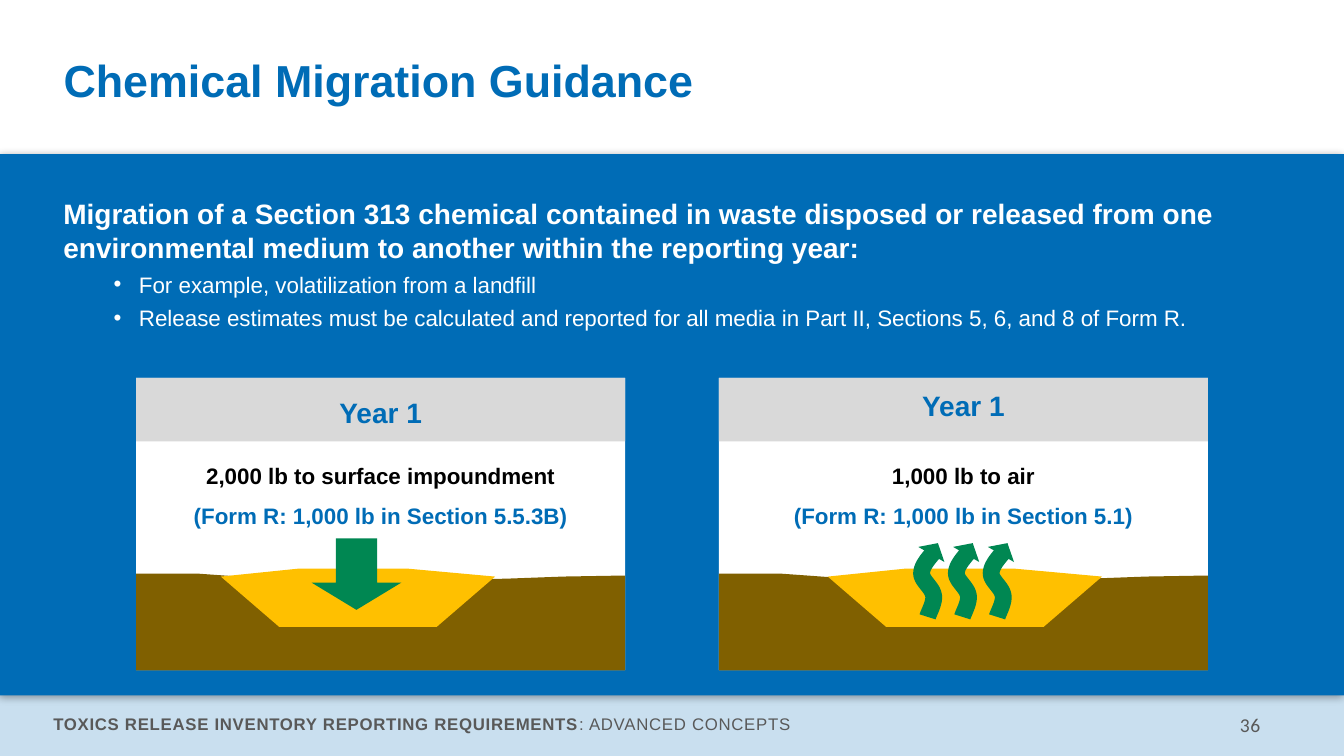
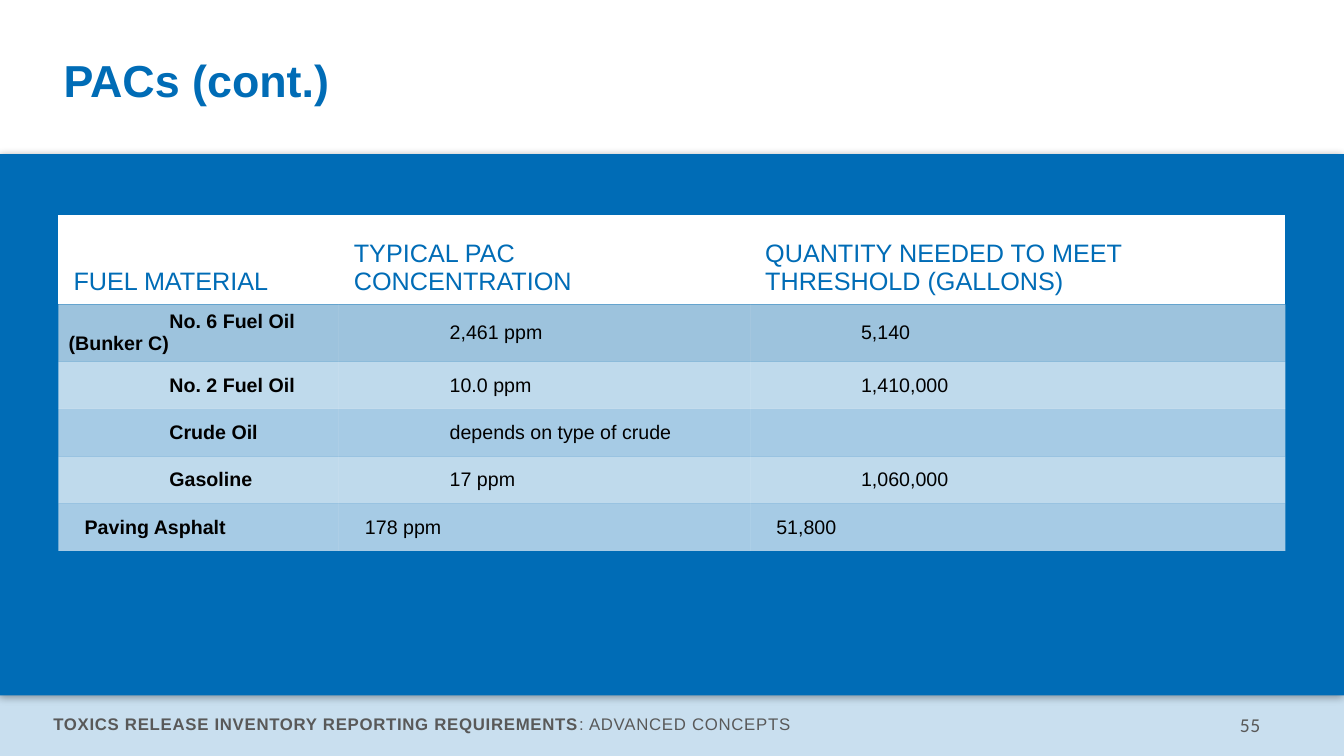
from lxml.etree import SubElement
from pptx import Presentation
from pptx.dml.color import RGBColor
from pptx.enum.shapes import MSO_SHAPE
from pptx.enum.text import MSO_ANCHOR, PP_ALIGN
from pptx.oxml.ns import qn
from pptx.util import Inches, Pt

BLUE, WHITE, BLACK = "006CB6", "FFFFFF", "000000"
GRAY, SILVER, GREEN = "595959", "D9D9D9", "008752"
SOIL, WASTE = "806000", "FFC000"
PLAIN = "{2D5ABB26-0587-4C30-8999-92F81FD0307C}"


def paint(item, color, alpha=100):
    """Fill a shape or table cell; a shape also loses its line and shadow."""
    item.fill.solid()
    item.fill.fore_color.rgb = RGBColor.from_string(color)
    if alpha < 100:
        tint = item.fill._xPr.find(qn("a:solidFill"))[0]
        SubElement(tint, qn("a:alpha"), val=str(alpha * 1000))
    if hasattr(item, "line"):
        item.line.fill.background()
        item.shadow.inherit = False


def write(para, text, size, color, bold=False, font="Arial"):
    run = para.add_run()
    run.text = text
    run.font.name = font
    run.font.size = Pt(size)
    run.font.bold = bold
    run.font.color.rgb = RGBColor.from_string(color)
    return run


deck = Presentation()
deck.slide_width, deck.slide_height = Inches(13.33), Inches(7.5)

# Shared frame: bands, title, footer and page number
slides = []
for title, page in (("Chemical Migration Guidance", "36"), ("PACs (cont.)", "55")):
    slide = deck.slides.add_slide(deck.slide_layouts[5])
    slides.append(slide)
    for top, height, alpha in ((6.72, 0.78, 21), (1.53, 5.37, 100)):
        band = slide.shapes.add_shape(
            MSO_SHAPE.RECTANGLE, 0, Inches(top), deck.slide_width, Inches(height))
        paint(band, BLUE, alpha)
    glow = SubElement(band.element.spPr.find(qn("a:effectLst")), qn("a:outerShdw"),
                      blurRad=str(Pt(6)), dist=str(Pt(1)), dir="5400000")
    shade = SubElement(glow, qn("a:srgbClr"), val=BLACK)
    SubElement(shade, qn("a:alpha"), val="34000")

    head = slide.shapes.title
    head.left, head.top = Inches(0.53), Inches(0.42)
    head.width, head.height = Inches(12.07), Inches(0.81)
    head.text_frame.vertical_anchor = MSO_ANCHOR.MIDDLE
    para = head.text_frame.paragraphs[0]
    para.alignment = PP_ALIGN.LEFT
    para.line_spacing = 0.9
    write(para, title, 32, BLUE, True)

    foot = slide.shapes.add_textbox(Inches(0.43), Inches(7.03), Inches(8.42), Inches(0.3))
    count = slide.shapes.add_textbox(Inches(11.27), Inches(7.02), Inches(1.33), Inches(0.34))
    left, right = (box.text_frame.paragraphs[0] for box in (foot, count))
    right.alignment = PP_ALIGN.RIGHT
    for run in (
        write(left, "TOXICS RELEASE INVENTORY REPORTING REQUIREMENTS", 12, GRAY, True),
        write(left, ": ADVANCED CONCEPTS", 12, GRAY),
        write(right, page, 14, GRAY, font="Calibri"),
    ):
        run.font._element.set("spc", "50")

# Migration slide: body text
shapes = slides[0].shapes
body = shapes.add_textbox(Inches(0.53), Inches(1.9), Inches(12.07), Inches(1.42)).text_frame
body.word_wrap = True
write(body.paragraphs[0], "Migration of a Section 313 chemical contained in waste disposed or "
      "released from one environmental medium to another within the reporting year:",
      20, WHITE, True)
for text in (
    "For example, volatilization from a landfill",
    "Release estimates must be calculated and reported for all media in Part II, "
    "Sections 5, 6, and 8 of Form R.",
):
    para = body.add_paragraph()
    props = para._p.get_or_add_pPr()
    props.set("marL", str(Inches(0.75)))
    props.set("indent", str(Inches(-0.25)))
    SubElement(props, qn("a:buFont"), typeface="Arial")
    SubElement(props, qn("a:buChar"), char="•")
    para.space_before = Pt(5)
    write(para, text, 16, WHITE)

# Migration slide: two panels with ground and pit outlines
GROUND = ((0, 6.65), (0, 5.69), (0.6, 5.69), (1.29, 5.74), (2.72, 5.81), (2.96, 5.72),
          (3.34, 5.75), (3.71, 5.74), (4.24, 5.72), (4.85, 5.71), (4.85, 6.65))
PIT = ((0, 5.72), (0.58, 6.22), (2.14, 6.22), (2.72, 5.72), (1.84, 5.64), (0.78, 5.64))
WIDE = 4.85
for x, pit, year, fate, form in (
    (1.35, 0.84, 3.87, "2,000 lb to surface impoundment", "(Form R: 1,000 lb in Section 5.5.3B)"),
    (7.13, 1.08, 3.81, "1,000 lb to air", "(Form R: 1,000 lb in Section 5.1)"),
):
    for height, color in ((2.9, WHITE), (0.63, SILVER)):
        panel = shapes.add_shape(
            MSO_SHAPE.RECTANGLE, Inches(x), Inches(3.75), Inches(WIDE), Inches(height))
        paint(panel, color)
    for start, points, color in ((x, GROUND, SOIL), (x + pit, PIT, WASTE)):
        dots = [(Inches(start + dx), Inches(y)) for dx, y in points]
        path = shapes.build_freeform(*dots[0])
        path.add_line_segments(dots[1:], close=True)
        paint(path.convert_to_shape(), color)
    for top, text, size, color, space in (
        (year, "Year 1", 20, BLUE, 1.0),
        (4.57, fate, 16, BLACK, 0.9),
        (4.96, form, 16, BLUE, 0.9),
    ):
        frame = shapes.add_textbox(
            Inches(x), Inches(top), Inches(WIDE), Inches(0.4)).text_frame
        frame.word_wrap = True
        para = frame.paragraphs[0]
        para.alignment = PP_ALIGN.CENTER
        para.line_spacing = space
        write(para, text, size, color, True)

# Migration slide: arrow into the pit, three vapour arrows out of it
down = shapes.add_shape(
    MSO_SHAPE.DOWN_ARROW, Inches(3.09), Inches(5.34), Inches(0.89), Inches(0.71))
down.adjustments[0], down.adjustments[1] = 0.46, 0.38
paint(down, GREEN)

CURVES = (
    ((0.14, 5.48), (0.08, 5.55), (0.02, 5.62), (0.02, 5.69)),
    ((0.02, 5.69), (0.02, 5.76), (0.13, 5.83), (0.14, 5.91)),
    ((0.14, 5.91), (0.15, 5.98), (0.09, 6.08), (0.08, 6.12)),
)
STEPS = 10
for k in range(3):
    x = 9.12 + 0.345 * k
    dots = []
    for curve in CURVES:
        for n in range(STEPS + 1):
            t = n / STEPS
            mix = ((1 - t) ** 3, 3 * t * (1 - t) ** 2, 3 * t * t * (1 - t), t ** 3)
            dx, y = (sum(m * p[axis] for m, p in zip(mix, curve)) for axis in (0, 1))
            dots.append((Inches(x + dx), Inches(y)))
    path = shapes.build_freeform(*dots[0])
    path.add_line_segments(dots[1:], close=False)
    wave = path.convert_to_shape()
    wave.fill.background()
    wave.shadow.inherit = False
    wave.line.width = Pt(12)
    wave.line.color.rgb = RGBColor.from_string(GREEN)
    tip = shapes.add_shape(
        MSO_SHAPE.ISOSCELES_TRIANGLE, Inches(x), Inches(5.38), Inches(0.3), Inches(0.13))
    tip.rotation = 30
    paint(tip, GREEN)

# Fuel slide: table
HEADS = ("FUEL MATERIAL", "TYPICAL PAC CONCENTRATION",
         "QUANTITY NEEDED TO MEET THRESHOLD (GALLONS)")
FUELS = (
    ("No. 6 Fuel Oil (Bunker C)", "2,461 ppm", "5,140"),
    ("No. 2 Fuel Oil", "10.0 ppm", "1,410,000"),
    ("Crude Oil", "depends on type of crude", ""),
    ("Gasoline", "17 ppm", "1,060,000"),
    ("Paving Asphalt", "178 ppm", "51,800"),
)
FILLS = (("F2F2F2", 65), (WHITE, 75), (WHITE, 65), (WHITE, 75), (WHITE, 65))
INDENTS = (1, 1, 1, 1, 0.16)

holder = slides[1].shapes.add_table(
    len(FUELS) + 1, 3, Inches(0.58), Inches(2.13), Inches(12.17), Inches(3.24))
table = holder.table
table.first_row = table.horz_banding = False
table._tbl.tblPr.find(qn("a:tableStyleId")).text = PLAIN
for col, width in zip(table.columns, (2.78, 4.08, 5.31)):
    col.width = Inches(width)
for row in table.rows:
    row.height = Inches(0.47)
table.rows[0].height = Inches(0.89)

for c, text in enumerate(HEADS):
    cell = table.cell(0, c)
    paint(cell, WHITE)
    cell.vertical_anchor = MSO_ANCHOR.BOTTOM
    cell.margin_left = cell.margin_right = Inches(0.15)
    cell.margin_top = cell.margin_bottom = Inches(0.08)
    write(cell.text_frame.paragraphs[0], text, 18, BLUE)

for r, (fuel, fill, indent) in enumerate(zip(FUELS, FILLS, INDENTS), 1):
    for c, text in enumerate(fuel):
        cell = table.cell(r, c)
        paint(cell, *fill)
        cell.vertical_anchor = MSO_ANCHOR.MIDDLE
        if text:
            para = cell.text_frame.paragraphs[0]
            para._p.get_or_add_pPr().set("indent", str(Inches(indent)))
            write(para, text, 14, BLACK, c == 0)

deck.save("out.pptx")
